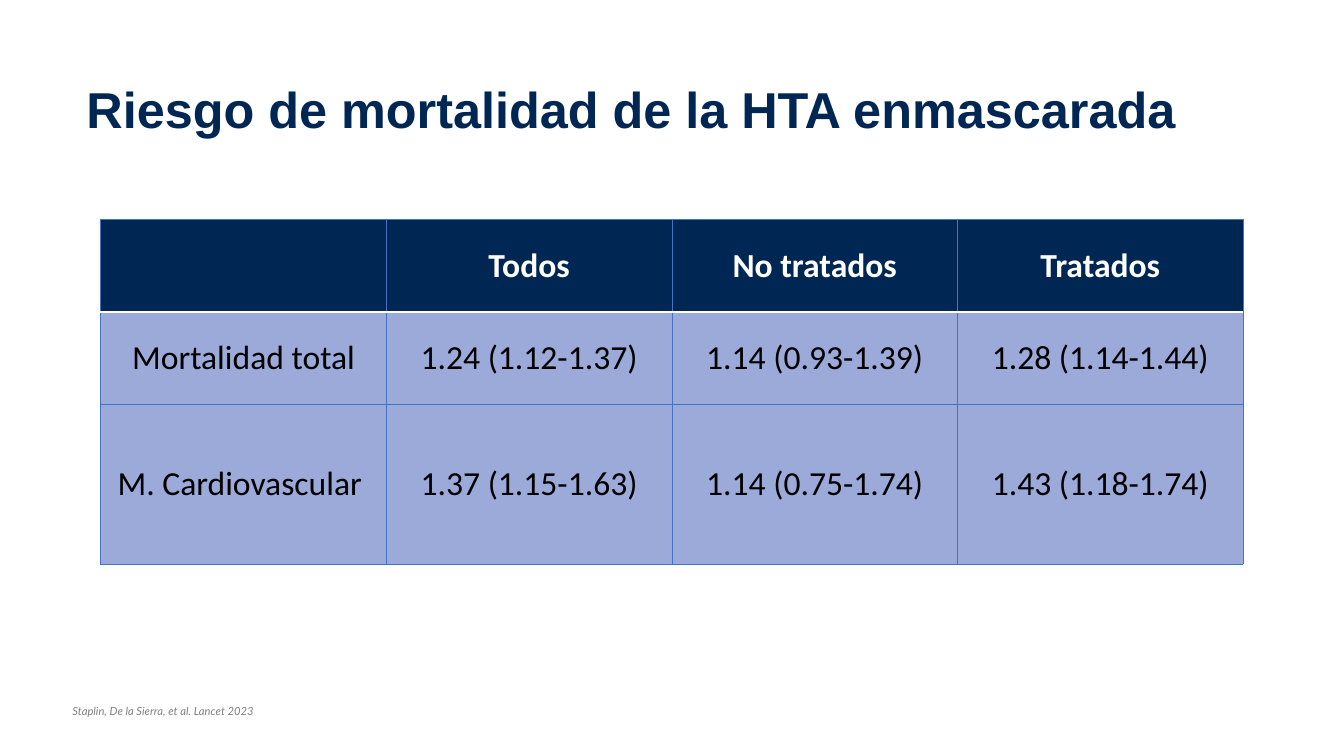
from dataclasses import dataclass

from lxml.etree import SubElement
from pptx import Presentation
from pptx.dml.color import RGBColor
from pptx.enum.text import MSO_ANCHOR as Anchor, PP_ALIGN as Align
from pptx.oxml.ns import qn
from pptx.util import Inches, Pt


@dataclass(frozen=True)
class Theme:
    navy: str = "002754"
    periwinkle: str = "9BAAD9"
    grid: str = "4472C4"
    white: str = "FFFFFF"
    black: str = "000000"
    grey: str = "808080"
    title_font: str = "Arial"
    table_font: str = "Calibri"
    citation_font: str = "Lato"
    title_size: int = 36
    table_size: int = 24
    citation_size: int = 8
    grid_width: float = 0.5
    header_rule_width: float = 1


THEME = Theme()
SLIDE_WIDTH, SLIDE_HEIGHT = 13.33, 7.5

TITLE = "Riesgo de mortalidad de la HTA enmascarada"
RISKS = [
    ["", "Todos", "No tratados", "Tratados"],
    ["Mortalidad total", "1.24 (1.12-1.37)", "1.14 (0.93-1.39)", "1.28 (1.14-1.44)"],
    ["M. Cardiovascular ", "1.37 (1.15-1.63)", "1.14 (0.75-1.74)", "1.43 (1.18-1.74)"],
]
ROW_HEIGHTS = [0.92, 0.92, 1.58]
CITATION = "Staplin, De la Sierra, et al. Lancet 2023"


def write(frame, text, *, font, size, color, bold=False, italic=False,
          align=Align.LEFT, line_spacing=1.0):
    paragraph = frame.paragraphs[0]
    paragraph.alignment = align
    paragraph.line_spacing = line_spacing
    run = paragraph.add_run()
    run.text = text
    run.font.name = font
    run.font.size = Pt(size)
    run.font.bold = bold
    run.font.italic = italic
    run.font.color.rgb = RGBColor.from_string(color)


def add_text(slide, box, text, *, anchor=Anchor.TOP, wrap=True, **style):
    frame = slide.shapes.add_textbox(*map(Inches, box)).text_frame
    frame.word_wrap = wrap
    frame.vertical_anchor = anchor
    write(frame, text, **style)


def set_borders(cell, borders):
    """Draw the cell's sides; borders maps L, R, T and B to (colour, points)."""
    properties = cell._tc.get_or_add_tcPr()
    for position, side in enumerate("LRTB"):
        color, width = borders[side]
        line = SubElement(properties, qn(f"a:ln{side}"), w=str(Pt(width)))
        fill = SubElement(line, qn("a:solidFill"))
        SubElement(fill, qn("a:srgbClr"), val=color)
        properties.insert(position, line)


def add_risk_table(slide, box):
    left, top, width, height = box
    table = slide.shapes.add_table(
        len(RISKS), len(RISKS[0]), *map(Inches, box)).table
    for column in table.columns:
        column.width = Inches(width / len(RISKS[0]))
    for row, share in zip(table.rows, ROW_HEIGHTS):
        row.height = Inches(height * share / sum(ROW_HEIGHTS))

    grid_line = (THEME.grid, THEME.grid_width)
    header_rule = (THEME.white, THEME.header_rule_width)
    for row_index, values in enumerate(RISKS):
        is_header = row_index == 0
        borders = dict.fromkeys("LRTB", grid_line)
        if is_header:
            borders["B"] = header_rule
        elif row_index == 1:
            borders["T"] = header_rule
        for column_index, value in enumerate(values):
            cell = table.cell(row_index, column_index)
            cell.vertical_anchor = Anchor.MIDDLE
            cell.fill.solid()
            cell.fill.fore_color.rgb = RGBColor.from_string(
                THEME.navy if is_header else THEME.periwinkle)
            set_borders(cell, borders)
            if value:
                write(cell.text_frame, value, font=THEME.table_font,
                      size=THEME.table_size, bold=is_header, align=Align.CENTER,
                      color=THEME.white if is_header else THEME.black)


def add_risk_slide(deck, width, height):
    slide = deck.slides.add_slide(deck.slide_layouts[6])
    add_text(slide, (width * 0.057, height * 0.07, width * 0.886, height * 0.157),
             TITLE, anchor=Anchor.MIDDLE, font=THEME.title_font,
             size=THEME.title_size, color=THEME.navy, bold=True, line_spacing=0.9)
    add_risk_table(
        slide, (width * 0.075, height * 0.29, width * 0.85, height * 0.456))
    add_text(slide, (width * 0.0465, height * 0.925, width * 0.161, height * 0.032),
             CITATION, wrap=False, font=THEME.citation_font,
             size=THEME.citation_size, color=THEME.grey, italic=True)


def main():
    deck = Presentation()
    deck.slide_width = Inches(SLIDE_WIDTH)
    deck.slide_height = Inches(SLIDE_HEIGHT)
    add_risk_slide(deck, SLIDE_WIDTH, SLIDE_HEIGHT)
    deck.save("out.pptx")


if __name__ == "__main__":
    main()
